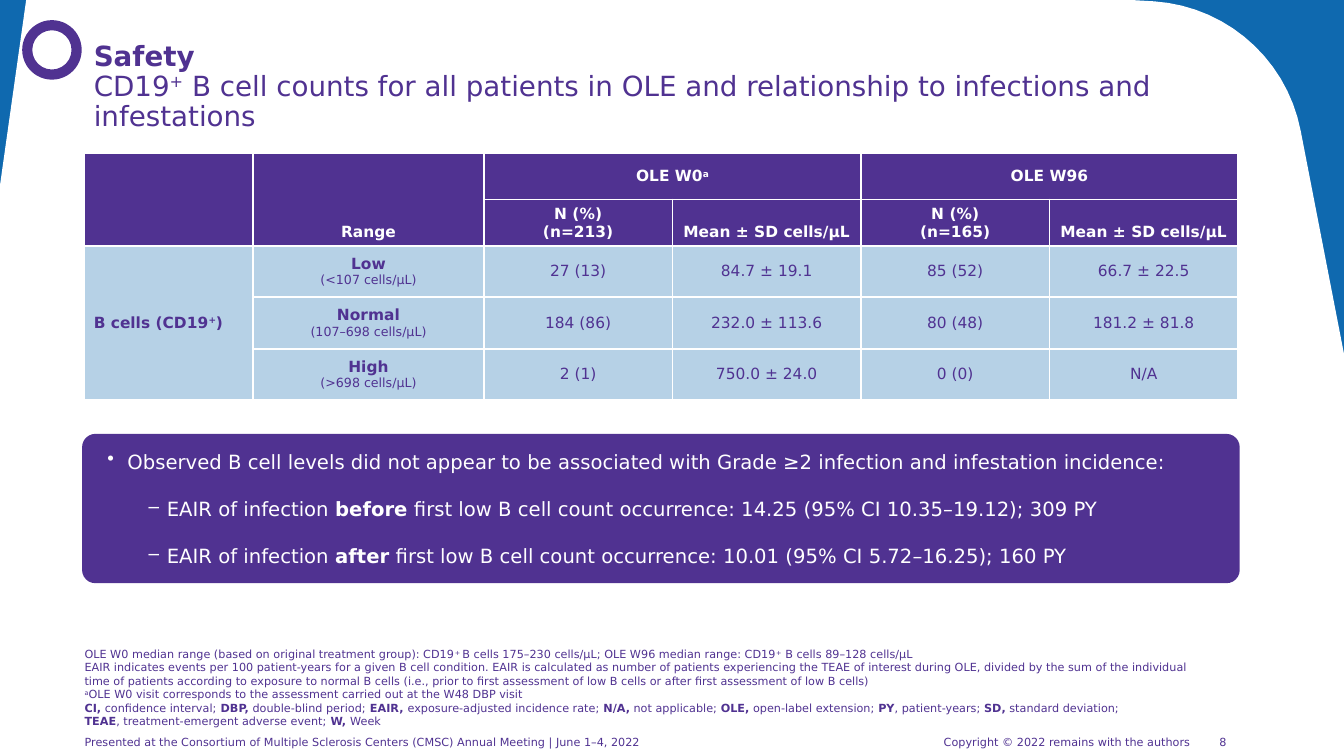
from math import cos, radians, sin

from lxml.etree import SubElement
from pptx import Presentation
from pptx.dml.color import RGBColor
from pptx.enum.shapes import MSO_SHAPE
from pptx.enum.text import MSO_ANCHOR, PP_ALIGN
from pptx.oxml.ns import qn
from pptx.util import Inches, Pt

FONT = "DejaVu Sans"
PURPLE = RGBColor(0x50, 0x32, 0x91)
BLUE = RGBColor(0x0F, 0x69, 0xAF)
TINT = RGBColor(0x0F, 0x69, 0xAE)
WHITE = RGBColor(0xFF, 0xFF, 0xFF)

# Markup: *bold*, ^superscript^, \n new paragraph, \v line break
TITLE = ("*Safety*\vCD19^+^ B cell counts for all patients in OLE "
         "and relationship to infections and infestations")
HEADS = [
    ["", "Range", "OLE W0^a^", "", "OLE W96", ""],
    ["", "", "N (%)\n(n=213)", "Mean ± SD cells/µL",
     "N (%)\n(n=165)", "Mean ± SD cells/µL"],
]
ROWS = [
    ["*B cells (CD19^+^)*", "*Low*\n(<107 cells/μL)",
     "27 (13)", "84.7 ± 19.1", "85 (52)", "66.7 ± 22.5"],
    ["", "*Normal*\n(107–698 cells/μL)",
     "184 (86)", "232.0 ± 113.6", "80 (48)", "181.2 ± 81.8"],
    ["", "*High*\n(>698 cells/μL)",
     "2 (1)", "750.0 ± 24.0", "0 (0)", "N/A"],
]
COLS = [1.68, 2.29] + [1.87] * 4
TALL = [0.46] * 2 + [0.51] * 3
SPANS = [((0, 0), (1, 0)), ((0, 1), (1, 1)), ((0, 2), (0, 3)),
         ((0, 4), (0, 5)), ((2, 0), (4, 0))]
POINTS = [
    ("•", "Observed B cell levels did not appear to be associated with "
          "Grade ≥2 infection and infestation incidence:"),
    ("‒", "EAIR of infection *before* first low B cell count occurrence: "
          "14.25 (95% CI 10.35–19.12); 309 PY"),
    ("‒", "EAIR of infection *after* first low B cell count occurrence: "
          "10.01 (95% CI 5.72–16.25); 160 PY"),
]
INDENT = {"•": (0, 0.2, 0.2), "‒": (1, 0.59, 0.19)}  # level, margin, hang
NOTES = "\n".join([
    "OLE W0 median range (based on original treatment group): CD19^+ ^B cells "
    "175–230 cells/μL; OLE W96 median range: CD19^+^ B cells 89–128 cells/μL",
    "EAIR indicates events per 100 patient-years for a given B cell condition. "
    "EAIR is calculated as number of patients experiencing the TEAE of interest "
    "during OLE, divided by the sum of the individual time of patients according "
    "to exposure to normal B cells (i.e., prior to first assessment of low B "
    "cells or after first assessment of low B cells)",
    "^a^OLE W0 visit corresponds to the assessment carried out at the W48 DBP visit",
    "*CI,* confidence interval;* DBP,* double-blind period;* EAIR, *"
    "exposure-adjusted incidence rate; *N/A,* not applicable; *OLE,* open-label "
    "extension; *PY*, patient-years; *SD,* standard deviation; \v"
    "*TEAE*, treatment-emergent adverse event; *W, *Week",
])
FOOTER = ("Presented at the Consortium of Multiple Sclerosis Centers (CMSC) Annual "
          "Meeting | June 1–4, 2022 \tCopyright © 2022 remains with the authors")
PAGE = "8"

WIDE, HIGH = 13.33, 7.5
LEFT, SPAN = 0.83, 11.45


def write(frame, text, size, color, align=PP_ALIGN.LEFT):
    """Fill a text frame from the markup."""
    frame.word_wrap = True
    for n, line in enumerate(text.split("\n")):
        para = frame.add_paragraph() if n else frame.paragraphs[0]
        para.alignment = align
        for m, part in enumerate(line.split("\v")):
            if m:
                para.add_line_break()
                SubElement(para._p[-1], qn("a:rPr"), sz=str(int(size * 100)))
            for i, chunk in enumerate(part.split("*")):
                for j, bit in enumerate(chunk.split("^")):
                    if not bit:
                        continue
                    run = para.add_run()
                    run.text = bit
                    font = run.font
                    font.name, font.size, font.bold = FONT, Pt(size), i % 2 == 1
                    font.color.rgb = color
                    if j % 2:
                        font._element.set("baseline", "30000")


def inset(item, *sides):
    (item.margin_left, item.margin_top,
     item.margin_right, item.margin_bottom) = map(Inches, sides)


def box(left, top, width, height):
    return slide.shapes.add_textbox(*map(Inches, (left, top, width, height)))


def paint(shape, color):
    shape.shadow.inherit = False
    shape.fill.solid()
    shape.fill.fore_color.rgb = color
    shape.line.fill.background()


def border(cell):
    props = cell._tc.get_or_add_tcPr()
    for n, side in enumerate(("lnL", "lnR", "lnT", "lnB")):
        line = SubElement(props, qn("a:" + side), w=str(Pt(1.5)))
        fill = SubElement(line, qn("a:solidFill"))
        SubElement(fill, qn("a:srgbClr"), val=str(WHITE))
        props.insert(n, line)


def add_page():
    """White page with a cut left edge and a round right corner."""
    arc = [(11.34 + 1.59 * sin(radians(a)), 1.6 - 1.59 * cos(radians(a)))
           for a in range(4, 80, 5)]
    edge = arc + [(WIDE, 3.51), (WIDE, HIGH), (0, HIGH), (0, 1.84), (0.26, 0)]
    pen = slide.shapes.build_freeform(Inches(11.21), 0)
    pen.add_line_segments([(Inches(x), Inches(y)) for x, y in edge])
    page = pen.convert_to_shape()
    paint(page, WHITE)
    slide.shapes._spTree.insert(2, page._element)


def add_counts():
    data = HEADS + ROWS
    frame = slide.shapes.add_table(
        len(data), len(COLS), Inches(LEFT), Inches(1.52), Inches(SPAN), Inches(sum(TALL)))
    table = frame.table
    table.horz_banding = table.first_row = False
    for col, width in zip(table.columns, COLS):
        col.width = Inches(width)
    for row, height in zip(table.rows, TALL):
        row.height = Inches(height)
    for r, row in enumerate(data):
        head = r < len(HEADS)
        for c, text in enumerate(row):
            cell = table.cell(r, c)
            cell.fill.solid()
            cell.fill.fore_color.rgb = PURPLE if head else TINT
            if head:
                text = "\n".join(f"*{part}*" for part in text.split("\n"))
            else:
                tone = next(cell._tc.iter(qn("a:srgbClr")))
                SubElement(tone, qn("a:alpha"), val="30000")
                inset(cell, 0.04 if c else 0.1, 0.02, 0.04, 0.02)
            low = r == 1 or c == 1
            cell.vertical_anchor = MSO_ANCHOR.BOTTOM if head and low else MSO_ANCHOR.MIDDLE
            align = PP_ALIGN.CENTER if head or c else PP_ALIGN.LEFT
            write(cell.text_frame, text, 11, WHITE if head else PURPLE, align)
            if c == 1 and not head:
                cell.text_frame.paragraphs[1].runs[0].font.size = Pt(9)
            border(cell)
    for start, end in SPANS:
        table.cell(*start).merge(table.cell(*end))


def add_points():
    panel = slide.shapes.add_shape(
        MSO_SHAPE.ROUNDED_RECTANGLE, *map(Inches, (LEFT, 4.32, SPAN, 1.45)))
    panel.adjustments[0] = 0.08
    paint(panel, PURPLE)
    panel.line.color.rgb, panel.line.width = PURPLE, Pt(2.25)
    frame = panel.text_frame
    frame.vertical_anchor = MSO_ANCHOR.MIDDLE
    inset(frame, 0.2, 0.05, 0.1, 0.05)
    write(frame, "\n".join(text for _, text in POINTS), 14, WHITE)
    for n, (para, (mark, _)) in enumerate(zip(frame.paragraphs, POINTS)):
        level, margin, hang = INDENT[mark]
        para.level = level
        para.space_before = Pt(17 if n else 0)
        props = para._p.get_or_add_pPr()
        props.set("marL", str(Inches(margin)))
        props.set("indent", str(-Inches(hang)))
        SubElement(props, qn("a:buChar"), char=mark)


deck = Presentation()
deck.slide_width, deck.slide_height = Inches(WIDE), Inches(HIGH)
slide = deck.slides.add_slide(deck.slide_layouts[5])
slide.background.fill.solid()
slide.background.fill.fore_color.rgb = BLUE
add_page()

title = slide.shapes.title
title.left, title.top, title.width, title.height = map(Inches, (LEFT, 0.37, 11.59, 0.88))
title.text_frame.vertical_anchor = MSO_ANCHOR.TOP
write(title.text_frame, TITLE, 19.8, PURPLE)
title.text_frame.paragraphs[0].line_spacing = 0.9

ring = slide.shapes.add_shape(MSO_SHAPE.DONUT, *map(Inches, (0.22, 0.2, 0.59, 0.59)))
ring.adjustments[0] = 0.17
paint(ring, PURPLE)

add_points()
add_counts()

notes = box(0.74, 6.36, 11.4, 0.91).text_frame
notes.vertical_anchor = MSO_ANCHOR.BOTTOM
write(notes, NOTES, 8, PURPLE)

footer = box(LEFT, 7.29, 12.33, 0.14).text_frame
inset(footer, 0.01, 0.01, 0, 0)
write(footer, FOOTER, 8, PURPLE)
tabs = SubElement(footer.paragraphs[0]._p.get_or_add_pPr(), qn("a:tabLst"))
SubElement(tabs, qn("a:tab"), pos=str(Inches(8.52)), algn="l")

number = box(11.85, 7.23, 0.56, 0.26).text_frame
number.vertical_anchor = MSO_ANCHOR.MIDDLE
write(number, PAGE, 8, PURPLE, PP_ALIGN.CENTER)

deck.save("out.pptx")
